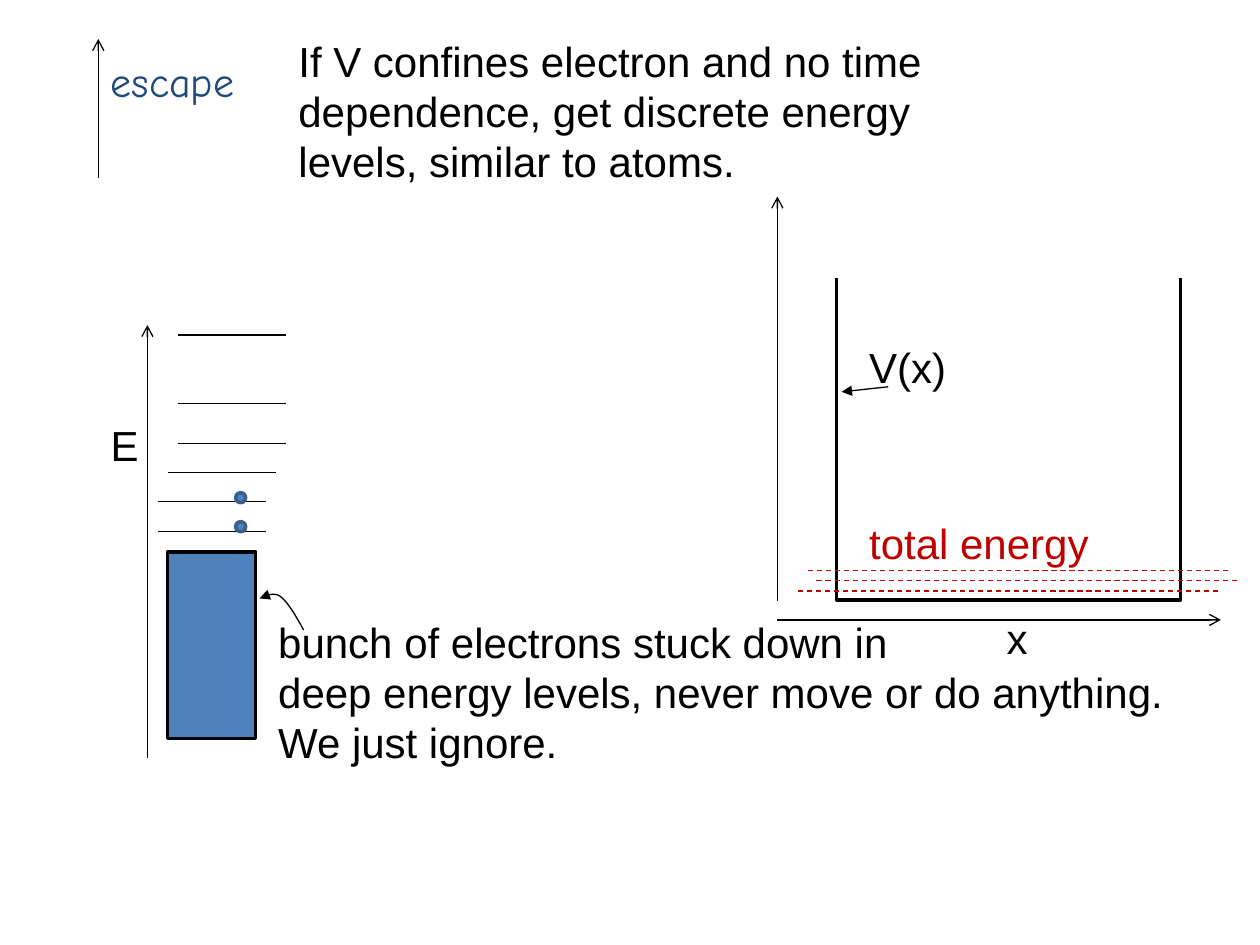
from lxml import etree
from pptx import Presentation
from pptx.dml.color import RGBColor
from pptx.enum.dml import MSO_LINE
from pptx.enum.shapes import MSO_CONNECTOR, MSO_SHAPE
from pptx.enum.text import MSO_AUTO_SIZE
from pptx.oxml.ns import qn
from pptx.util import Inches, Pt

RECT, OVAL = MSO_SHAPE.RECTANGLE, MSO_SHAPE.OVAL
STRAIGHT, DASH = MSO_CONNECTOR.STRAIGHT, MSO_LINE.DASH
BLACK, WHITE, RED = "000000", "FFFFFF", "C00000"
BLUE, EDGE, NAVY = "4F81BD", "3A5F8C", "1F497D"

# Content: left, top, width, height, lines, colour, font
TEXTS = [
    (2.27, 0.23, 5.29, 1.31, ["If V confines electron and no time",
                              "dependence, get discrete energy",
                              "levels, similar to atoms."], BLACK, "Arial"),
    (2.11, 4.84, 7.3, 1.31, ["bunch of electrons stuck down in",
                             "deep energy levels, never move or do anything.",
                             "We just ignore."], BLACK, "Arial"),
    (0.78, 0.39, 1.29, 0.5, ["escape"], NAVY, "Comic Neue"),
    (0.78, 3.28, 0.43, 0.5, ["E"], BLACK, "Arial"),
    (7.89, 4.81, 0.37, 0.5, ["x"], BLACK, "Arial"),
    (6.8, 2.66, 0.82, 0.5, ["V(x)"], BLACK, "Arial"),
    (6.8, 4.06, 1.96, 0.5, ["total energy"], RED, "Arial"),
]
# Axes: start x, start y, end x, end y
AXES = [(6.17, 4.77, 6.17, 1.56), (6.17, 4.92, 9.69, 4.92),
        (1.17, 6.02, 1.17, 2.58), (0.78, 1.41, 0.78, 0.31)]
# Levels: left, height on the slide
TOTALS, TOTAL_W = [(6.41, 4.53), (6.48, 4.61), (6.33, 4.69)], 3.36
LEVELS, LEVEL_W = [(1.25, 4.22), (1.25, 3.98), (1.33, 3.75),
                   (1.41, 3.52), (1.41, 3.2), (1.41, 2.66)], 0.86
DOTS, DOT_X, DOT_W = [4.14, 3.91], 1.87, 0.08
# Pointers: V(x) to the wall, note to the filled levels
WALL = [(7.05, 3.07), (6.68, 3.11)]
BEND = [[(2.41, 5), (2.35, 4.89), (2.28, 4.77), (2.22, 4.73)],
        [(2.22, 4.73), (2.16, 4.69), (2.06, 4.75), (2.06, 4.75)]]
STEPS = 8

prs = Presentation()
prs.slide_width, prs.slide_height = Inches(10), Inches(7.5)
shapes = prs.slides.add_slide(prs.slide_layouts[6]).shapes


def rgb(code):
    return RGBColor.from_string(code)


def stroke(item, color, width, head=None):
    item.line.color.rgb = rgb(color)
    item.line.width = Pt(width)
    if head:
        ln = item.line._get_or_add_ln()
        etree.SubElement(ln, qn("a:tailEnd"), type=head)


def add_box(kind, x, y, w, h, fill, edge):
    box = shapes.add_shape(kind, *map(Inches, (x, y, w, h)))
    box.shadow.inherit = False
    if fill:
        box.fill.solid()
        box.fill.fore_color.rgb = rgb(fill)
    else:
        box.fill.background()
    stroke(box, edge, 2)


def add_line(ends, color=BLACK, head=None, dash=False):
    line = shapes.add_connector(STRAIGHT, *map(Inches, ends))
    if dash:
        line.line.dash_style = DASH
    stroke(line, color, 0.75, head)
    etree.SubElement(line._element.spPr, qn("a:effectLst"))


def add_path(points):
    pts = [(Inches(x), Inches(y)) for x, y in points]
    pen = shapes.build_freeform(*pts[0])
    pen.add_line_segments(pts[1:], close=False)
    path = pen.convert_to_shape()
    path.shadow.inherit = False
    path.fill.background()
    stroke(path, BLACK, 0.75, "triangle")


def bezier(a, b, c, d, t):
    s = 1 - t
    return tuple(s**3 * p + 3 * s * s * t * q + 3 * s * t * t * r + t**3 * e
                 for p, q, r, e in zip(a, b, c, d))


def add_text(x, y, w, h, lines, color, font):
    frame = shapes.add_textbox(*map(Inches, (x, y, w, h))).text_frame
    frame.word_wrap = False
    frame.auto_size = MSO_AUTO_SIZE.SHAPE_TO_FIT_TEXT
    frame.text = "\n".join(lines)
    for para in frame.paragraphs:
        face = para.runs[0].font
        face.size, face.name = Pt(24), font
        face.color.rgb = rgb(color)


# Potential well, opened at the top by a white band
add_box(RECT, 6.64, 1.87, 2.73, 2.89, None, BLACK)
add_box(RECT, 6.17, 1.8, 3.36, 0.39, WHITE, WHITE)

# Axes and energy levels
for ends in AXES:
    add_line(ends, head="arrow")
for x, y in TOTALS:
    add_line((x, y, x + TOTAL_W, y), RED, dash=True)
for x, y in LEVELS:
    add_line((x, y, x + LEVEL_W, y))

# Filled levels and single electrons
add_box(RECT, 1.33, 4.38, 0.7, 1.48, BLUE, BLACK)
for y in DOTS:
    add_box(OVAL, DOT_X, y, DOT_W, DOT_W, BLUE, EDGE)

# Labels and pointers
for item in TEXTS:
    add_text(*item)
add_path(WALL)
add_path([BEND[0][0]] + [bezier(*arc, i / STEPS)
                         for arc in BEND for i in range(1, STEPS + 1)])

prs.save("out.pptx")
